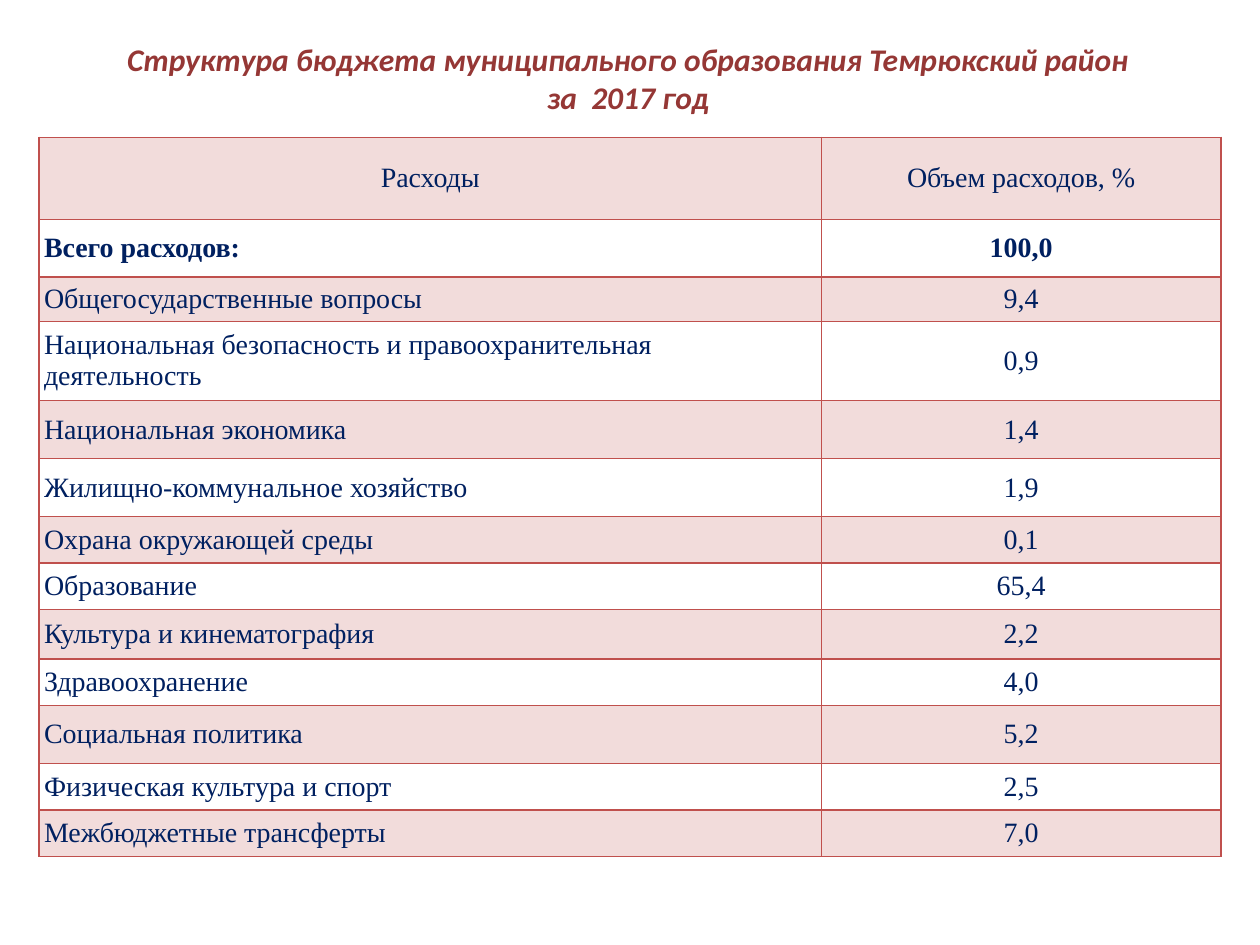
from lxml.etree import SubElement
from pptx import Presentation
from pptx.dml.color import RGBColor
from pptx.enum.text import MSO_ANCHOR, PP_ALIGN
from pptx.oxml.ns import qn
from pptx.util import Inches, Pt

RED = "C0504D"
ROWS = [
    # label, share of spending, row height
    ("Расходы", "Объем расходов, %", 0.65),
    ("Всего расходов:", "100,0", 0.46),
    ("Общегосударственные вопросы", "9,4", 0.35),
    ("Национальная безопасность и правоохранительная деятельность", "0,9", 0.63),
    ("Национальная экономика", "1,4", 0.46),
    ("Жилищно-коммунальное хозяйство", "1,9", 0.46),
    ("Охрана окружающей среды", "0,1", 0.37),
    ("Образование", "65,4", 0.37),
    ("Культура и кинематография", "2,2", 0.39),
    ("Здравоохранение", "4,0", 0.37),
    ("Социальная политика", "5,2", 0.46),
    ("Физическая культура и спорт", "2,5", 0.37),
    ("Межбюджетные трансферты", "7,0", 0.37),
]
COLUMN_WIDTHS = (6.21, 3.17)


def color(value):
    return RGBColor.from_string(value)


def add_borders(cell):
    properties = cell._tc.get_or_add_tcPr()
    for side in ("a:lnL", "a:lnR", "a:lnT", "a:lnB"):
        line = SubElement(properties, qn(side), w=str(Pt(1)))
        fill = SubElement(line, qn("a:solidFill"))
        SubElement(fill, qn("a:srgbClr"), val=RED)


deck = Presentation()
deck.slide_width, deck.slide_height = Inches(10), Inches(7.5)
page = deck.slides.add_slide(deck.slide_layouts[6])

# Title
box = page.shapes.add_textbox(Inches(0.47), Inches(0.3), Inches(9.03), Inches(0.64))
frame = box.text_frame
frame.word_wrap = True
frame.vertical_anchor = MSO_ANCHOR.MIDDLE
para = frame.paragraphs[0]
para.text = "Структура бюджета муниципального образования Темрюкский район\vза  2017 год"
para.alignment = PP_ALIGN.CENTER
para.font.name, para.font.size = "Calibri", Pt(18)
para.font.bold = para.font.italic = True
para.font.color.rgb = color("953735")

# Spending table
table = page.shapes.add_table(
    len(ROWS), len(COLUMN_WIDTHS), Inches(0.31), Inches(1.09),
    Inches(sum(COLUMN_WIDTHS)), Inches(sum(row[2] for row in ROWS))).table
table.first_row = table.horz_banding = False
for column, width in zip(table.columns, COLUMN_WIDTHS):
    column.width = Inches(width)

for row_index, (label, share, height) in enumerate(ROWS):
    table.rows[row_index].height = Inches(height)
    for column_index, text in enumerate((label, share)):
        cell = table.cell(row_index, column_index)
        cell.margin_left = cell.margin_right = Inches(0.04)
        cell.margin_top = cell.margin_bottom = 0
        cell.vertical_anchor = MSO_ANCHOR.MIDDLE
        add_borders(cell)

        # Every other row is a transparent red
        if row_index % 2 == 0:
            cell.fill.solid()
            cell.fill.fore_color.rgb = color(RED)
            tint = cell._tc.tcPr.find(qn("a:solidFill")).find(qn("a:srgbClr"))
            SubElement(tint, qn("a:alpha"), val="20000")
        else:
            cell.fill.background()

        para = cell.text_frame.paragraphs[0]
        para.text = text
        centered = row_index == 0 or column_index == 1
        para.alignment = PP_ALIGN.CENTER if centered else PP_ALIGN.LEFT
        para.font.name, para.font.size = "Times New Roman", Pt(16)
        para.font.bold = row_index == 1
        para.font.color.rgb = color("002060")

deck.save("out.pptx")
